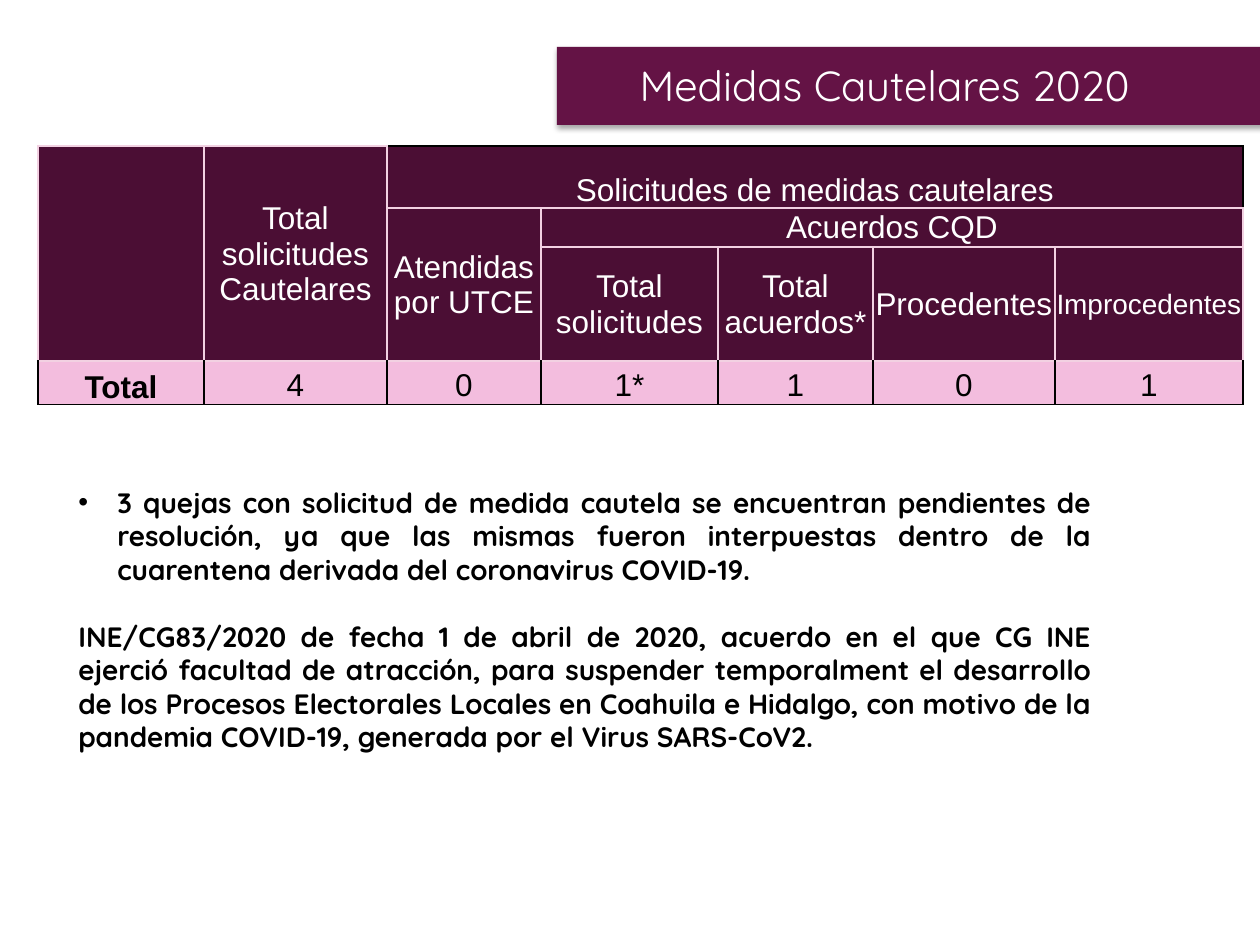
from lxml import etree
from pptx import Presentation
from pptx.dml.color import RGBColor
from pptx.enum.shapes import MSO_SHAPE
from pptx.enum.text import MSO_ANCHOR, PP_ALIGN
from pptx.oxml.ns import qn
from pptx.util import Pt

EMU_PER_INCH = 914400
PX_PER_INCH = 126
RECTANGLE = MSO_SHAPE.RECTANGLE
MIDDLE, BOTTOM, TOP = MSO_ANCHOR.MIDDLE, MSO_ANCHOR.BOTTOM, MSO_ANCHOR.TOP
CENTER, RIGHT, JUSTIFY = PP_ALIGN.CENTER, PP_ALIGN.RIGHT, PP_ALIGN.JUSTIFY

BAND, HEADER, BODY = "641345", "4B0E34", "F3BDDE"
PALE, BLACK, WHITE = "F2D1E2", "000000", "FFFFFF"
HEADER_EDGES = dict.fromkeys("LRTB", PALE)
TOP_EDGES = {"L": PALE, "R": BLACK, "T": BLACK, "B": PALE}
BODY_EDGES = {"L": BLACK, "R": BLACK, "T": PALE, "B": BLACK}


def px(length):
    return round(length * EMU_PER_INCH / PX_PER_INCH)


def rgb(value):
    return RGBColor.from_string(value)


def add_color(parent, value):
    return etree.SubElement(parent, qn("a:srgbClr"), val=value)


class SlideBuilder:
    heading_font = "Quicksand"
    table_font = "Arial"

    def __init__(self, slide):
        self.slide = slide

    def format_text(self, paragraph, font, size, color, bold=False):
        for run in paragraph.runs:
            run.font.name = font
            run.font.size = Pt(size)
            run.font.bold = bold
            run.font.color.rgb = rgb(color)

    def band(self, left, top, width, height, color):
        band = self.slide.shapes.add_shape(
            RECTANGLE, px(left), px(top), px(width), px(height))
        band.shadow.inherit = False
        band.fill.solid()
        band.fill.fore_color.rgb = rgb(color)
        band.line.fill.background()
        effects = band.fill._xPr.find(qn("a:effectLst"))
        shadow = etree.SubElement(
            effects, qn("a:outerShdw"), blurRad=str(Pt(3.1)),
            dist=str(Pt(1.8)), dir="5400000", rotWithShape="0")
        etree.SubElement(add_color(shadow, BLACK), qn("a:alpha"), val="35000")

    def text(self, left, top, width, height, content, size, color,
             align, anchor=TOP, bold=False, gap=0):
        box = self.slide.shapes.add_textbox(
            px(left), px(top), px(width), px(height))
        frame = box.text_frame
        frame.word_wrap = True
        frame.vertical_anchor = anchor
        frame.text = content
        for index, paragraph in enumerate(frame.paragraphs):
            paragraph.alignment = align
            if index:
                paragraph.space_before = Pt(gap)
            self.format_text(paragraph, self.heading_font, size, color, bold)
        return frame

    def bullet(self, paragraph, indent):
        properties = paragraph._p.get_or_add_pPr()
        properties.set("marL", str(px(indent)))
        properties.set("indent", str(-px(indent)))
        etree.SubElement(properties, qn("a:buFont"), typeface="Arial")
        etree.SubElement(properties, qn("a:buChar"), char="•")

    def table(self, left, top, columns, rows):
        table = self.slide.shapes.add_table(
            len(rows), len(columns), px(left), px(top),
            px(sum(columns)), px(sum(rows))).table
        table.first_row = table.horz_banding = False
        for column, width in zip(table.columns, columns):
            column.width = px(width)
        for row, height in zip(table.rows, rows):
            row.height = px(height)
        return table

    def borders(self, cell, edges):
        properties = cell._tc.get_or_add_tcPr()
        for side, color in edges.items():
            line = etree.SubElement(
                properties, qn(f"a:ln{side}"), w=str(Pt(1)))
            add_color(etree.SubElement(line, qn("a:solidFill")), color)

    def cell(self, table, row, column, content, fill, color, edges,
             span=(1, 1), anchor=MIDDLE, size=18, bold=False,
             side=1, upper=1, spacing=None):
        last_row, last_column = row + span[0], column + span[1]
        for r in range(row, last_row):
            for c in range(column, last_column):
                part = table.cell(r, c)
                part.margin_left = part.margin_right = px(side)
                part.margin_top, part.margin_bottom = px(upper), 0
                self.borders(part, edges)
                part.fill.solid()
                part.fill.fore_color.rgb = rgb(fill)
        origin = table.cell(row, column)
        if span != (1, 1):
            origin.merge(table.cell(last_row - 1, last_column - 1))
        origin.vertical_anchor = anchor
        origin.text_frame.text = content
        for paragraph in origin.text_frame.paragraphs:
            paragraph.alignment = CENTER
            if spacing:
                paragraph.line_spacing = spacing
            self.format_text(paragraph, self.table_font, size, color, bold)


def main():
    deck = Presentation()
    deck.slide_width, deck.slide_height = px(1260), px(945)
    builder = SlideBuilder(deck.slides.add_slide(deck.slide_layouts[6]))

    builder.band(557, 47, 728, 78, BAND)
    builder.text(557, 47, 585, 76, "Medidas Cautelares 2020", 24, WHITE,
                 RIGHT, MIDDLE)

    measures = builder.table(38, 146, [166, 183, 154, 177, 155, 182, 188],
                             [62, 36, 106, 40])
    headers = [
        (0, 0, "", (3, 1)),
        (0, 1, "Total solicitudes\nCautelares", (3, 1)),
        (0, 2, "Solicitudes de medidas cautelares", (1, 5)),
        (1, 2, "Atendidas por UTCE", (2, 1)),
        (1, 3, "Acuerdos CQD", (1, 4)),
        (2, 3, "Total solicitudes", (1, 1)),
        (2, 4, "Total acuerdos*", (1, 1)),
        (2, 5, "Procedentes", (1, 1)),
        (2, 6, "Improcedentes", (1, 1)),
    ]
    for row, column, label, span in headers:
        spans_group = span == (1, 5)
        builder.cell(measures, row, column, label, HEADER, WHITE,
                     TOP_EDGES if spans_group else HEADER_EDGES, span,
                     BOTTOM if spans_group else MIDDLE,
                     16 if label == "Improcedentes" else 18)
    builder.cell(measures, 3, 0, "Total", BODY, BLACK, BODY_EDGES,
                 anchor=BOTTOM, bold=True)
    for column, count in enumerate(["4", "0", "1*", "1", "0", "1"], 1):
        builder.cell(measures, 3, column, count, BODY, BLACK, BODY_EDGES,
                     side=5, upper=0, spacing=1.15)

    notes = [
        "3 quejas con solicitud de medida cautela se encuentran pendientes "
        "de resolución, ya que las mismas fueron interpuestas dentro de la "
        "cuarentena derivada del coronavirus COVID-19.",
        "INE/CG83/2020 de fecha 1 de abril de 2020, acuerdo en el que CG INE "
        "ejerció facultad de atracción, para suspender temporalment el "
        "desarrollo de los Procesos Electorales Locales en Coahuila e "
        "Hidalgo, con motivo de la pandemia COVID-19, generada por el Virus "
        "SARS-CoV2.",
    ]
    remarks = builder.text(66, 479, 1038, 285, "\n".join(notes), 16, BLACK,
                           JUSTIFY, bold=True, gap=19)
    builder.bullet(remarks.paragraphs[0], 39)

    deck.save("out.pptx")


if __name__ == "__main__":
    main()
